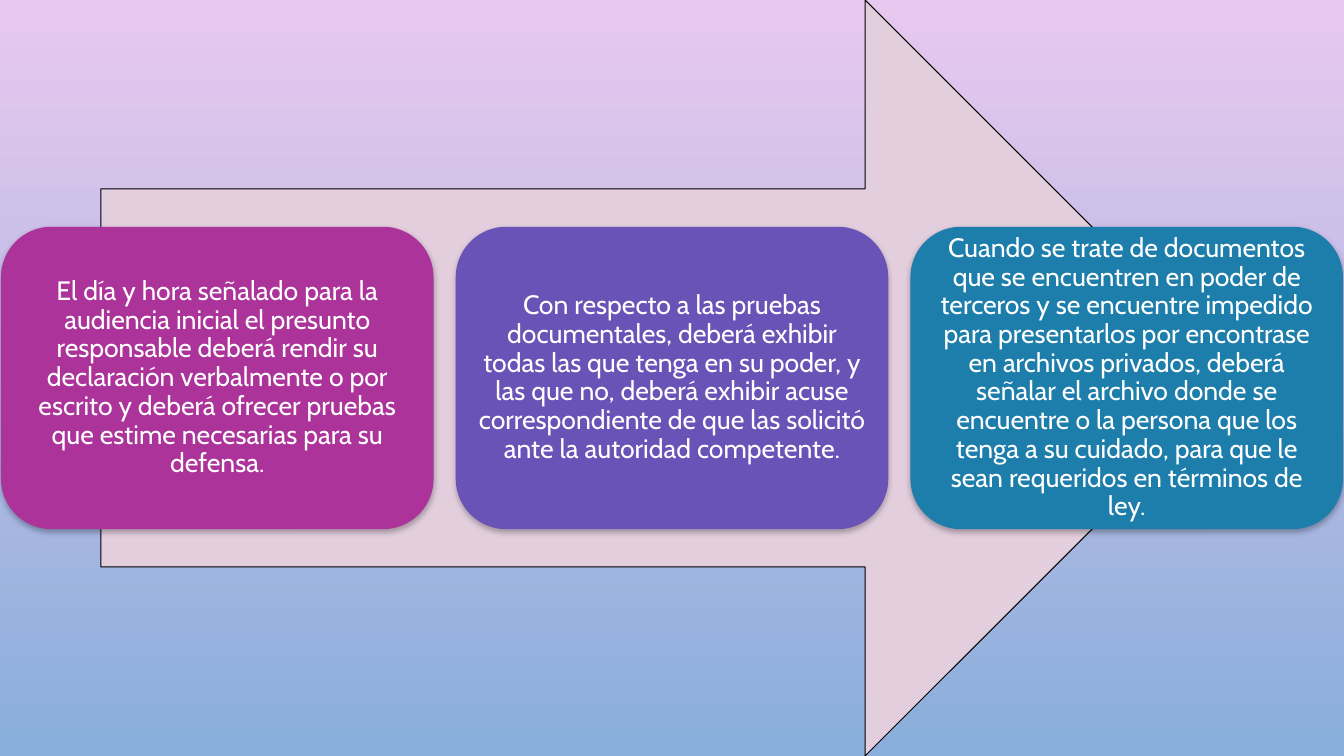
from lxml.etree import SubElement
from pptx import Presentation
from pptx.dml.color import RGBColor
from pptx.enum.shapes import MSO_SHAPE
from pptx.enum.text import MSO_ANCHOR, PP_ALIGN
from pptx.oxml.ns import qn
from pptx.util import Inches, Pt

PINK = RGBColor(0xE9, 0xC8, 0xEF)
SKY = RGBColor(0x89, 0xAE, 0xDB)
ROSE = RGBColor(0xE3, 0xCE, 0xDE)
PLUM = RGBColor(0xAC, 0x33, 0x9A)
VIOLET = RGBColor(0x69, 0x53, 0xB7)
TEAL = RGBColor(0x1D, 0x7E, 0xAB)
BLACK = RGBColor(0, 0, 0)
WHITE = RGBColor(0xFF, 0xFF, 0xFF)

STEPS = [
    (PLUM, "El día y hora señalado para la audiencia inicial el presunto "
           "responsable deberá rendir su declaración verbalmente o por escrito "
           "y deberá ofrecer pruebas que estime necesarias para su defensa."),
    (VIOLET, "Con respecto a las pruebas documentales, deberá exhibir todas las "
             "que tenga en su poder, y las que no, deberá exhibir acuse "
             "correspondiente de que las solicitó ante la autoridad competente."),
    (TEAL, "Cuando se trate de documentos que se encuentren en poder de terceros "
           "y se encuentre impedido para presentarlos por encontrase en archivos "
           "privados, deberá señalar el archivo donde se encuentre o la persona "
           "que los tenga a su cuidado, para que le sean requeridos en términos "
           "de ley."),
]


def write(frame, text, font="Cabin", size=19, color=WHITE, pad=0.08):
    frame.word_wrap = True
    frame.vertical_anchor = MSO_ANCHOR.MIDDLE
    frame.margin_left = frame.margin_right = Inches(pad)
    frame.margin_top = frame.margin_bottom = Inches(pad)
    para = frame.paragraphs[0]
    para.alignment = PP_ALIGN.CENTER
    para.line_spacing = 0.9
    run = para.add_run()
    run.text = text
    run.font.name = font
    run.font.size = Pt(size)
    run.font.color.rgb = color


class Deck:
    """Holds the style and the current slide."""

    def __init__(self, show):
        self.slide = show.slides.add_slide(show.slide_layouts[6])

    def back(self, top, base):
        fill = self.slide.background.fill
        fill.gradient()
        fill.gradient_angle = 270
        for stop, color in zip(fill.gradient_stops, (top, base)):
            stop.color.rgb = color

    def shape(self, kind, left, top, width, height, color):
        item = self.slide.shapes.add_shape(
            kind, Inches(left), Inches(top), Inches(width), Inches(height))
        item.shadow.inherit = False
        item.fill.solid()
        item.fill.fore_color.rgb = color
        item.line.fill.background()
        return item

    def arrow(self, left, top, width, height, color):
        item = self.shape(MSO_SHAPE.RIGHT_ARROW, left, top, width, height, color)
        item.line.color.rgb = BLACK
        item.line.width = Pt(0.75)

    def card(self, left, top, width, height, color, text):
        item = self.shape(
            MSO_SHAPE.ROUNDED_RECTANGLE, left, top, width, height, color)
        self.shade(item)
        write(item.text_frame, text)

    def shade(self, item):
        effect = item._element.spPr.find(qn("a:effectLst"))
        outer = SubElement(effect, qn("a:outerShdw"), blurRad=str(Pt(4)),
                           dist=str(Pt(2)), dir="5400000", rotWithShape="0")
        tint = SubElement(outer, qn("a:srgbClr"), val=str(BLACK))
        SubElement(tint, qn("a:alpha"), val="28000")


def main():
    show = Presentation()
    show.slide_width = Inches(13.33)
    show.slide_height = Inches(7.5)
    deck = Deck(show)
    deck.back(PINK, SKY)
    deck.arrow(1, 0, 11.33, 7.5, ROSE)
    for index, (color, text) in enumerate(STEPS):
        deck.card(0.01 + index * 4.51, 2.25, 4.29, 3, color, text)
    show.save("out.pptx")


if __name__ == "__main__":
    main()
